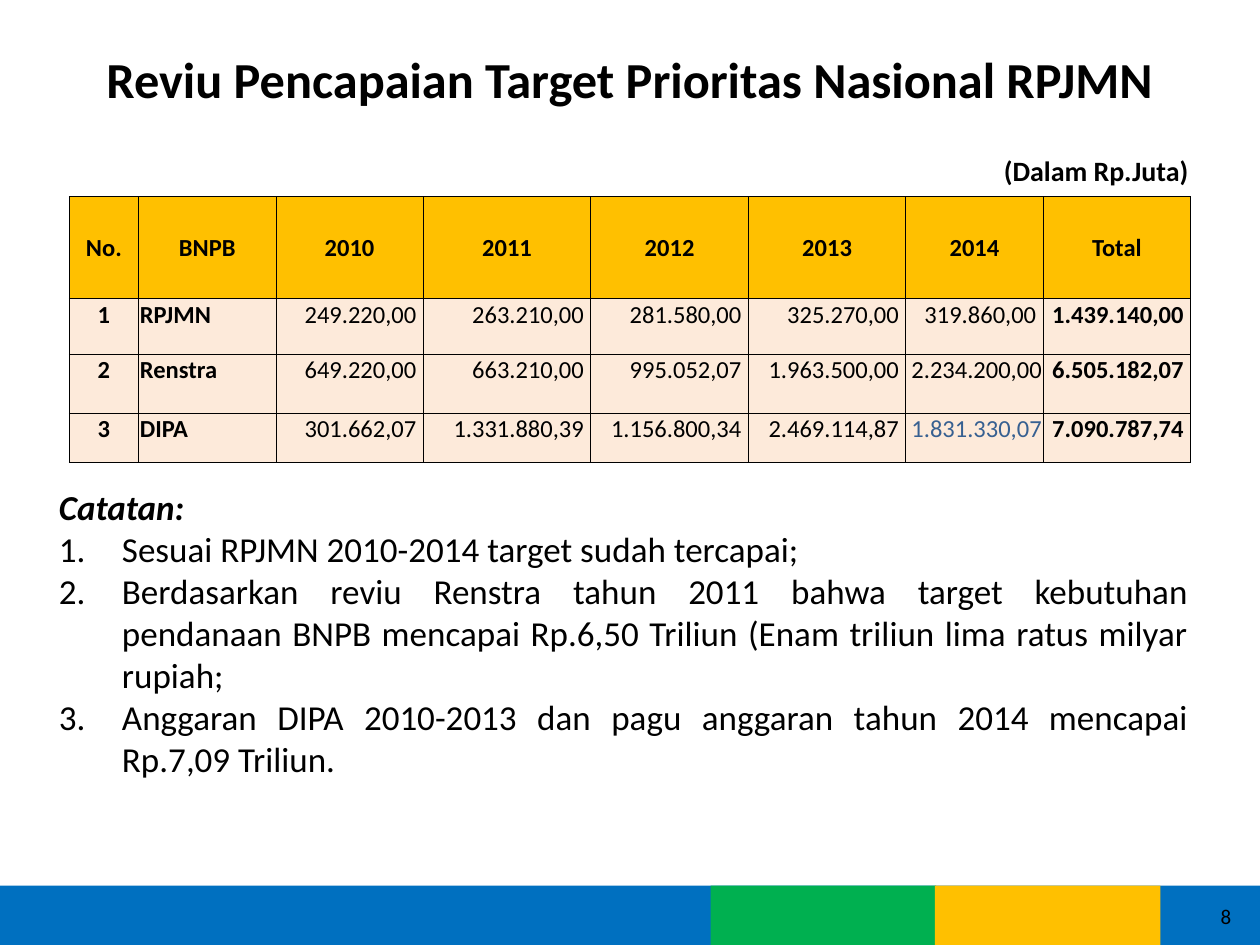
from dataclasses import dataclass

from lxml.etree import SubElement
from pptx import Presentation
from pptx.dml.color import RGBColor
from pptx.enum.shapes import MSO_SHAPE
from pptx.enum.text import MSO_ANCHOR, PP_ALIGN
from pptx.oxml import parse_xml
from pptx.oxml.ns import nsdecls, qn
from pptx.util import Inches, Pt

BLACK = RGBColor(0x00, 0x00, 0x00)
BLUE = RGBColor(0x00, 0x70, 0xC0)
GREEN = RGBColor(0x00, 0xB0, 0x50)
AMBER = RGBColor(0xFF, 0xC0, 0x00)
PEACH = RGBColor(0xFD, 0xEA, 0xDA)
STEEL = RGBColor(0x37, 0x60, 0x91)
FONT = "Calibri"


@dataclass(frozen=True)
class Band:
    left: float
    width: float
    color: RGBColor


@dataclass(frozen=True)
class Label:
    text: str
    left: float
    top: float
    width: float
    height: float
    size: float
    align: PP_ALIGN
    anchor: MSO_ANCHOR = MSO_ANCHOR.MIDDLE
    bold: bool = False
    space_before: float = 0


BANDS = [Band(0, 10, BLUE), Band(5.64, 1.79, GREEN), Band(7.42, 1.79, AMBER)]
LABELS = [
    Label("Reviu Pencapaian Target Prioritas Nasional RPJMN",
          0.5, 0.3, 9, 0.64, 28.8, PP_ALIGN.CENTER, bold=True),
    Label("8", 7.54, 7.07, 2.33, 0.4, 12, PP_ALIGN.RIGHT),
    Label("(Dalam Rp.Juta)", 0.39, 1.17, 9.14, 0.39, 16, PP_ALIGN.RIGHT,
          MSO_ANCHOR.TOP, True, 3.2),
]
COLUMN_WIDTHS = [0.55, 1.09, 1.17, 1.33, 1.25, 1.25, 1.09, 1.17]
ROW_HEIGHTS = [0.81, 0.44, 0.47, 0.39]
BUDGET = [
    ["No.", "BNPB", "2010", "2011", "2012", "2013", "2014", "Total"],
    ["1", "RPJMN", "249.220,00", "263.210,00", "281.580,00", "325.270,00",
     "319.860,00", "1.439.140,00"],
    ["2", "Renstra", "649.220,00", "663.210,00", "995.052,07", "1.963.500,00",
     "2.234.200,00", "6.505.182,07"],
    ["3", "DIPA", "301.662,07", "1.331.880,39", "1.156.800,34", "2.469.114,87",
     "1.831.330,07", "7.090.787,74"],
]
HIGHLIGHTED_CELL = (3, 6)
NOTES_HEADING = "Catatan:"
NOTES = [
    "Sesuai RPJMN 2010-2014 target sudah tercapai;",
    "Berdasarkan reviu Renstra tahun 2011 bahwa target kebutuhan pendanaan BNPB "
    "mencapai Rp.6,50 Triliun (Enam triliun lima ratus milyar rupiah;",
    "Anggaran DIPA 2010-2013 dan pagu anggaran tahun 2014 mencapai Rp.7,09 Triliun.",
]


def format_paragraph(paragraph, size: float, align: PP_ALIGN, bold: bool = False,
                     italic: bool = False, color: RGBColor = BLACK) -> None:
    paragraph.alignment = align
    for run in paragraph.runs:
        run.font.name = FONT
        run.font.size = Pt(size)
        run.font.bold = bold
        run.font.italic = italic
        run.font.color.rgb = color


def add_band(slide, band: Band) -> None:
    shape = slide.shapes.add_shape(MSO_SHAPE.RECTANGLE, Inches(band.left), Inches(7.03),
                                   Inches(band.width), Inches(0.5))
    shape.shadow.inherit = False
    shape.fill.solid()
    shape.fill.fore_color.rgb = band.color
    shape.line.fill.background()


def add_label(slide, label: Label) -> None:
    box = slide.shapes.add_textbox(Inches(label.left), Inches(label.top),
                                   Inches(label.width), Inches(label.height))
    text_frame = box.text_frame
    text_frame.word_wrap = True
    text_frame.vertical_anchor = label.anchor
    text_frame.text = label.text
    paragraph = text_frame.paragraphs[0]
    paragraph.space_before = Pt(label.space_before)
    format_paragraph(paragraph, label.size, label.align, label.bold)


def add_borders(cell) -> None:
    properties = cell._tc.get_or_add_tcPr()
    for index, side in enumerate(("lnL", "lnR", "lnT", "lnB")):
        properties.insert(index, parse_xml(
            f'<a:{side} {nsdecls("a")} w="{Pt(0.5)}"><a:solidFill>'
            f'<a:srgbClr val="{BLACK}"/></a:solidFill></a:{side}>'))


def format_cell(cell, row: int, column: int) -> None:
    is_header = row == 0
    is_amount = not is_header and column >= 2
    cell.margin_left = cell.margin_right = cell.margin_top = Inches(0.01)
    cell.margin_bottom = 0
    cell.vertical_anchor = MSO_ANCHOR.MIDDLE if is_header else MSO_ANCHOR.TOP
    cell.fill.solid()
    cell.fill.fore_color.rgb = AMBER if is_header else PEACH
    add_borders(cell)
    cell.text_frame.text = BUDGET[row][column] + (" " if is_amount else "")
    if is_amount:
        align = PP_ALIGN.RIGHT
    elif is_header or column == 0:
        align = PP_ALIGN.CENTER
    else:
        align = PP_ALIGN.LEFT
    is_total = column == len(COLUMN_WIDTHS) - 1
    color = STEEL if (row, column) == HIGHLIGHTED_CELL else BLACK
    format_paragraph(cell.text_frame.paragraphs[0], 14, align,
                     bold=is_total or not is_amount, color=color)


def add_budget_table(slide) -> None:
    table = slide.shapes.add_table(len(ROW_HEIGHTS), len(COLUMN_WIDTHS), Inches(0.55),
                                   Inches(1.56), Inches(sum(COLUMN_WIDTHS)),
                                   Inches(sum(ROW_HEIGHTS))).table
    for column, width in zip(table.columns, COLUMN_WIDTHS):
        column.width = Inches(width)
    for row, height in zip(table.rows, ROW_HEIGHTS):
        row.height = Inches(height)
    for row in range(len(ROW_HEIGHTS)):
        for column in range(len(COLUMN_WIDTHS)):
            format_cell(table.cell(row, column), row, column)


def add_notes_list(slide) -> None:
    box = slide.shapes.add_textbox(Inches(0.37), Inches(3.8), Inches(9.16), Inches(2.82))
    text_frame = box.text_frame
    text_frame.word_wrap = True
    text_frame.text = "\n".join([NOTES_HEADING, *NOTES])
    heading, *items = text_frame.paragraphs
    format_paragraph(heading, 20, PP_ALIGN.JUSTIFY, bold=True, italic=True)
    for item in items:
        format_paragraph(item, 20, PP_ALIGN.JUSTIFY)
        properties = item._p.get_or_add_pPr()
        properties.set("marL", str(Inches(0.5)))
        properties.set("indent", str(-Inches(0.5)))
        SubElement(properties, qn("a:buAutoNum"), type="arabicPeriod")


def main() -> None:
    presentation = Presentation()
    presentation.slide_width = Inches(10)
    presentation.slide_height = Inches(7.5)
    slide = presentation.slides.add_slide(presentation.slide_layouts[6])
    for band in BANDS:
        add_band(slide, band)
    for label in LABELS:
        add_label(slide, label)
    add_budget_table(slide)
    add_notes_list(slide)
    presentation.save("out.pptx")


if __name__ == "__main__":
    main()
